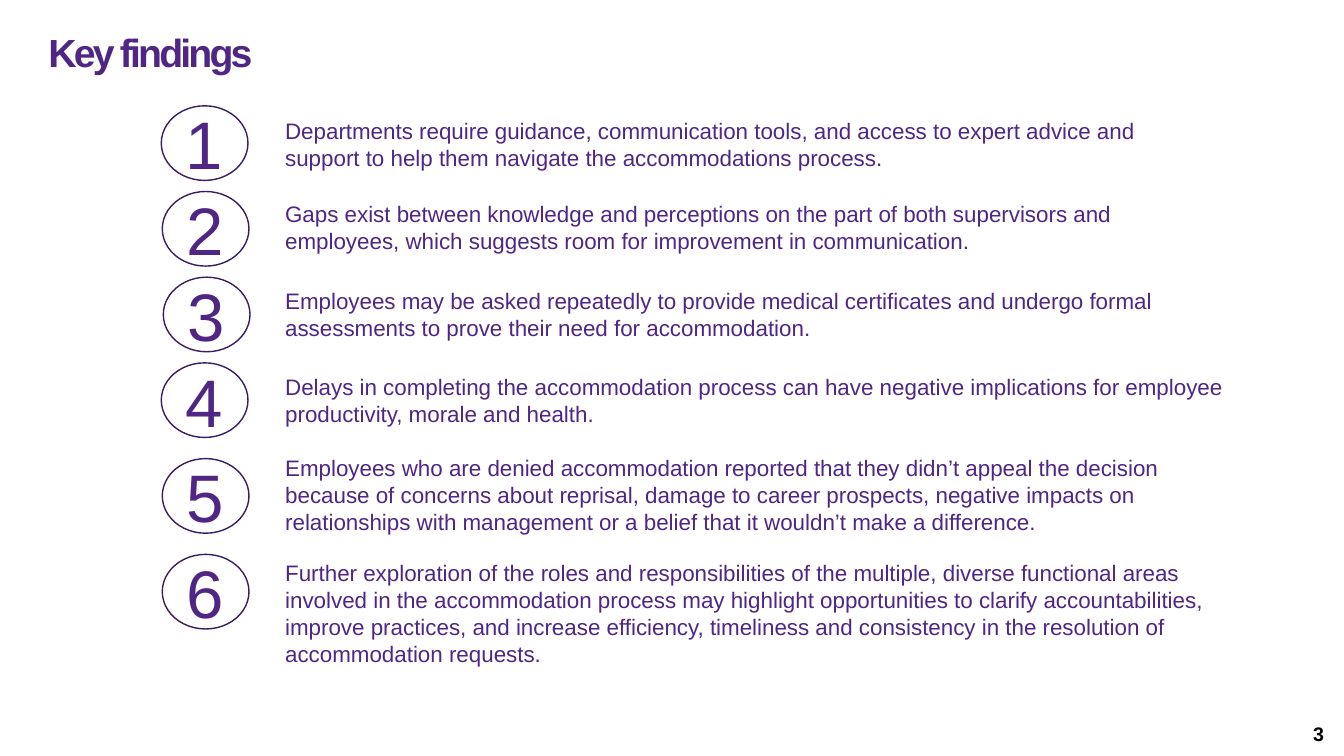
import pptx
import pptx.dml.color
import pptx.enum.shapes
import pptx.enum.text
import pptx.util

Inches = pptx.util.Inches
Pt = pptx.util.Pt
ANCHOR = pptx.enum.text.MSO_ANCHOR
ALIGN = pptx.enum.text.PP_ALIGN

PURPLE = pptx.dml.color.RGBColor(0x4F, 0x26, 0x84)
DARK_PURPLE = pptx.dml.color.RGBColor(0x3A, 0x1C, 0x62)
WHITE = pptx.dml.color.RGBColor(0xFF, 0xFF, 0xFF)
BLACK = pptx.dml.color.RGBColor(0x00, 0x00, 0x00)

TITLE_FORMAT = {"size": Pt(28), "bold": True, "color": PURPLE}
NUMBER_FORMAT = {"size": Pt(48), "color": PURPLE}
FINDING_FORMAT = {"size": Pt(16), "color": PURPLE}
PAGE_FORMAT = {"size": Pt(14), "bold": True, "color": BLACK}

CIRCLE_WIDTH, CIRCLE_HEIGHT = 0.86, 0.74
TEXT_LEFT = 2.73

# Circle left, circle top, text top, text width, text height, wording
FINDINGS = [
    (1.6, 1.05, 1.11, 8.63, 0.64,
     "Departments require guidance, communication tools, and access to expert "
     "advice and support to help them navigate the accommodations process."),
    (1.61, 1.9, 1.94, 9.33, 0.64,
     "Gaps exist between knowledge and perceptions on the part of both supervisors "
     "and employees, which suggests room for improvement in communication."),
    (1.62, 2.75, 2.8, 9.65, 0.64,
     "Employees may be asked repeatedly to provide medical certificates and undergo "
     "formal assessments to prove their need for accommodation."),
    (1.6, 3.6, 3.65, 9.65, 0.64,
     "Delays in completing the accommodation process can have negative implications "
     "for employee productivity, morale and health."),
    (1.61, 4.55, 4.46, 9.65, 0.91,
     "Employees who are denied accommodation reported that they didn’t appeal the "
     "decision because of concerns about reprisal, damage to career prospects, "
     "negative impacts on relationships with management or a belief that it "
     "wouldn’t make a difference."),
    (1.61, 5.5, 5.5, 9.65, 1.18,
     "Further exploration of the roles and responsibilities of the multiple, diverse "
     "functional areas involved in the accommodation process may highlight "
     "opportunities to clarify accountabilities, improve practices, and increase "
     "efficiency, timeliness and consistency in the resolution of accommodation "
     "requests."),
]


def write_text(shape, text, font_format, align=ALIGN.LEFT, anchor=ANCHOR.TOP):
    frame = shape.text_frame
    frame.word_wrap = True
    frame.vertical_anchor = anchor
    paragraph = frame.paragraphs[0]
    paragraph.alignment = align
    run = paragraph.add_run()
    run.text = text
    run.font.name = "Arial"
    for name, value in font_format.items():
        if name == "color":
            run.font.color.rgb = value
        else:
            setattr(run.font, name, value)
    return paragraph


def add_text(slide, box, text, font_format, **layout):
    shape = slide.shapes.add_textbox(*map(Inches, box))
    write_text(shape, text, font_format, **layout)


def add_title(slide, box, text):
    title = slide.shapes.title
    title.left, title.top, title.width, title.height = map(Inches, box)
    frame = title.text_frame
    frame.auto_size = pptx.enum.text.MSO_AUTO_SIZE.NONE
    margins = {"margin_left": 0, "margin_right": 0,
               "margin_top": Inches(0.02), "margin_bottom": Inches(0.02)}
    for name, value in margins.items():
        setattr(frame, name, value)
    paragraph = write_text(title, text, TITLE_FORMAT)
    paragraph.line_spacing = 0.9
    # Tight letter spacing, in hundredths of a point
    paragraph.runs[0].font._element.set("spc", "-200")


def add_number_circle(slide, left, top, number):
    box = (left, top, CIRCLE_WIDTH, CIRCLE_HEIGHT)
    circle = slide.shapes.add_shape(
        pptx.enum.shapes.MSO_SHAPE.OVAL, *map(Inches, box))
    circle.shadow.inherit = False
    circle.fill.solid()
    circle.fill.fore_color.rgb = WHITE
    circle.line.color.rgb = DARK_PURPLE
    circle.line.width = Pt(1)
    write_text(circle, str(number), NUMBER_FORMAT, ALIGN.CENTER, ANCHOR.MIDDLE)


def add_findings(slide):
    for number, finding in enumerate(FINDINGS, start=1):
        circle_left, circle_top, text_top, width, height, text = finding
        add_number_circle(slide, circle_left, circle_top, number)
        add_text(slide, (TEXT_LEFT, text_top, width, height), text, FINDING_FORMAT)


def main():
    presentation = pptx.Presentation()
    presentation.slide_width = Inches(13.33)
    presentation.slide_height = Inches(7.5)
    slide = presentation.slides.add_slide(presentation.slide_layouts[5])

    # Heading
    add_title(slide, (0.48, 0.31, 9.28, 0.52), "Key findings")
    # Numbered list
    add_findings(slide)
    # Page number
    add_text(slide, (10.23, 7.08, 3, 0.4), "3", PAGE_FORMAT,
             align=ALIGN.RIGHT, anchor=ANCHOR.MIDDLE)

    presentation.save("out.pptx")


if __name__ == "__main__":
    main()
